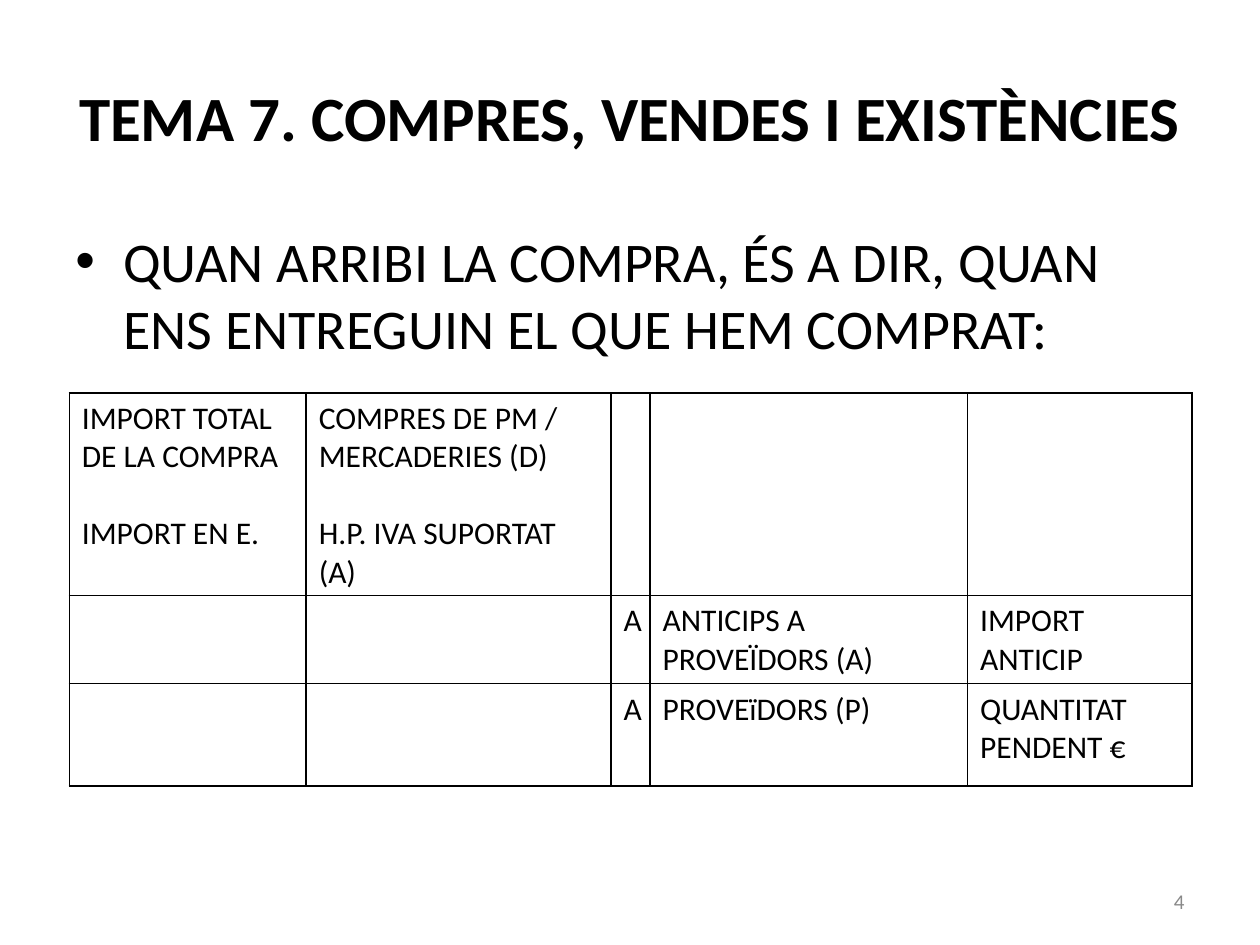
from lxml import etree
from pptx import Presentation
from pptx.dml.color import RGBColor
from pptx.enum.text import MSO_ANCHOR, PP_ALIGN
from pptx.oxml.ns import qn
from pptx.util import Inches, Pt

LEFT, MID, RIGHT = PP_ALIGN.LEFT, PP_ALIGN.CENTER, PP_ALIGN.RIGHT
TOP, CENTER = MSO_ANCHOR.TOP, MSO_ANCHOR.MIDDLE
BLACK, GREY = "000000", "898989"


def color(code):
    return RGBColor.from_string(code)


def write(para, text, size, code=BLACK, bold=False):
    run = para.add_run()
    run.text = text
    look = {"name": "Calibri", "size": Pt(size), "bold": bold}
    for key, value in look.items():
        setattr(run.font, key, value)
    run.font.color.rgb = color(code)


deck = Presentation()
deck.slide_width, deck.slide_height = Inches(10), Inches(7.5)
slide = deck.slides.add_slide(deck.slide_layouts[6])

# Title, body and page number
texts = [
    ((0.5, 0.3, 9, 1.25), "TEMA 7. COMPRES, VENDES I EXISTÈNCIES",
     36, BLACK, True, MID, CENTER),
    ((0.5, 1.75, 9, 1.3),
     "QUAN ARRIBI LA COMPRA, ÉS A DIR, QUAN ENS ENTREGUIN EL QUE HEM COMPRAT:",
     32, BLACK, False, LEFT, TOP),
    ((7.17, 6.95, 2.33, 0.4), "4", 12, GREY, False, RIGHT, CENTER),
]
paras = []
for place, text, size, code, bold, align, anchor in texts:
    frame = slide.shapes.add_textbox(*map(Inches, place)).text_frame
    frame.word_wrap = True
    frame.vertical_anchor = anchor
    para = frame.paragraphs[0]
    para.alignment = align
    write(para, text, size, code, bold)
    paras.append(para)

# Bullet with hanging indent on the body
props = paras[1]._p.get_or_add_pPr()
props.set("marL", str(Inches(0.38)))
props.set("indent", str(Inches(-0.38)))
etree.SubElement(props, qn("a:buFont"), typeface="Arial")
etree.SubElement(props, qn("a:buChar"), char="•")

# Journal entry table
wides = [1.88, 2.42, 0.31, 2.52, 1.78]
highs = [1.58, 0.7, 0.81]
rows = [
    [["IMPORT TOTAL DE LA COMPRA", "IMPORT EN E."],
     ["COMPRES DE PM / MERCADERIES (D)", "H.P. IVA SUPORTAT (A)"], [], [], []],
    [[], [], ["A"], ["ANTICIPS A PROVEÏDORS (A)"], ["IMPORT ANTICIP"]],
    [[], [], ["A"], ["PROVEïDORS (P)"], ["QUANTITAT PENDENT €"]],
]
table = slide.shapes.add_table(
    len(highs), len(wides), Inches(0.55), Inches(3.12),
    Inches(sum(wides)), Inches(sum(highs))).table
table.first_row = table.horz_banding = False
for col, wide in zip(table.columns, wides):
    col.width = Inches(wide)

for row, high, cells in zip(table.rows, highs, rows):
    row.height = Inches(high)
    for cell, lines in zip(row.cells, cells):
        frame = cell.text_frame
        for num, line in enumerate(lines):
            para = frame.add_paragraph() if num else frame.paragraphs[0]
            if num:
                para.space_before = Pt(22)
            write(para, line, 18)
        # Thin black border on every side, no fill
        props = cell._tc.get_or_add_tcPr()
        for side in ("lnL", "lnR", "lnT", "lnB"):
            edge = etree.SubElement(props, qn("a:" + side), w=str(Pt(1)))
            fill = etree.SubElement(edge, qn("a:solidFill"))
            etree.SubElement(fill, qn("a:srgbClr"), val=BLACK)
        cell.fill.background()

deck.save("out.pptx")
